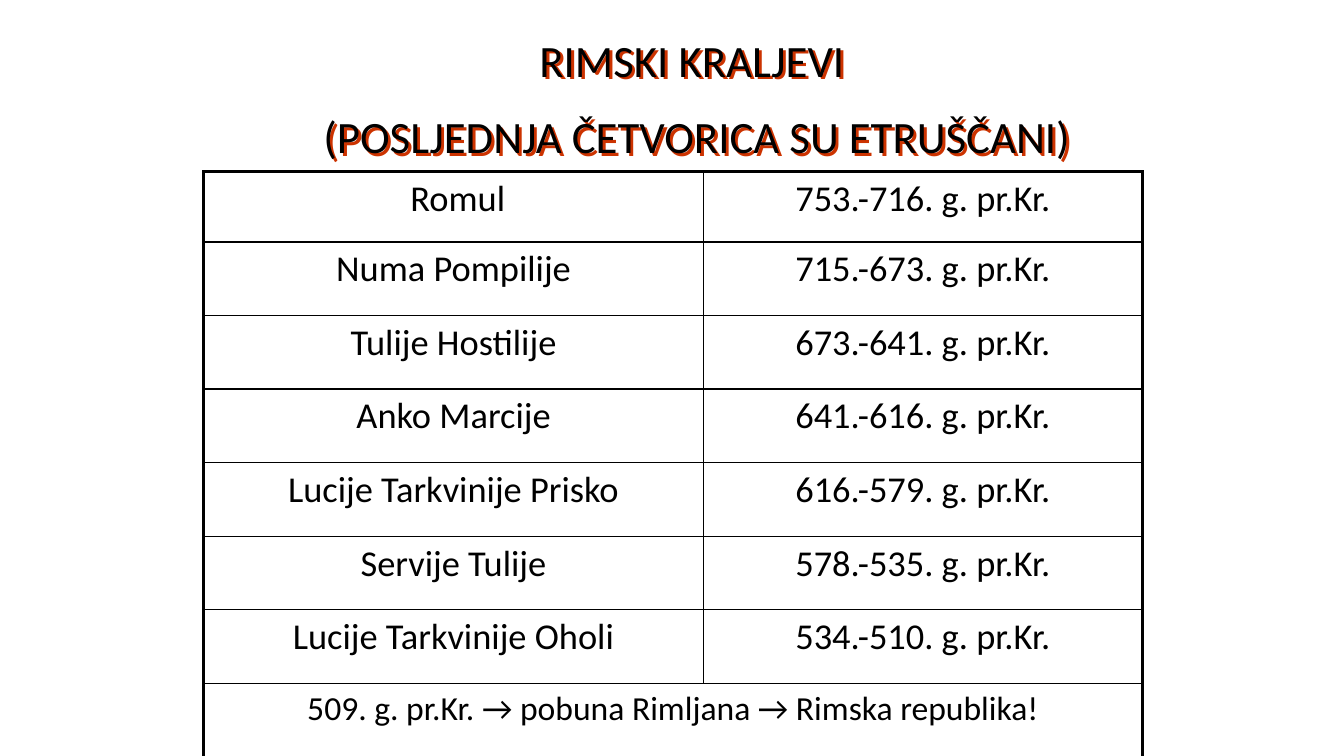
from typing import NamedTuple

from lxml import etree
from pptx import Presentation
from pptx.dml.color import RGBColor
from pptx.enum.text import MSO_ANCHOR, MSO_AUTO_SIZE, PP_ALIGN
from pptx.oxml.ns import qn
from pptx.util import Inches, Pt

CENTER = PP_ALIGN.CENTER
TOP = MSO_ANCHOR.TOP
NO_AUTOFIT = MSO_AUTO_SIZE.NONE

FONT = "Calibri"
BLACK = "000000"
SHADOW = "CC3300"
THIN, THICK = 1, 2.25
COLUMN_WIDTHS = (4.96, 4.35)
FIRST_ROW_HEIGHT, ROW_HEIGHT = 0.7, 0.73


class King(NamedTuple):
    name: str
    reign: str


TITLE_LINES = ("RIMSKI KRALJEVI ", "(POSLJEDNJA ČETVORICA SU ETRUŠČANI)")
KINGS = (
    King(" Romul", "753.-716. g. pr.Kr."),
    King("Numa Pompilije", "715.-673. g. pr.Kr."),
    King("Tulije Hostilije", "673.-641. g. pr.Kr."),
    King("Anko Marcije", "641.-616. g. pr.Kr."),
    King("Lucije Tarkvinije Prisko", "616.-579. g. pr.Kr."),
    King("Servije Tulije", "578.-535. g. pr.Kr."),
    King("Lucije Tarkvinije Oholi", "534.-510. g. pr.Kr."),
)
CONCLUSION = "509. g. pr.Kr. → pobuna Rimljana → Rimska republika!"


def color(hex_code: str) -> RGBColor:
    return RGBColor.from_string(hex_code)


def format_paragraph(para, size: float) -> None:
    para.alignment = CENTER
    para.font.name = FONT
    para.font.size = Pt(size)
    para.font.color.rgb = color(BLACK)


def add_color(parent, hex_code: str) -> None:
    etree.SubElement(parent, qn("a:srgbClr"), val=hex_code)


def add_text_shadow(shape) -> None:
    """Give an unfilled shape a hard shadow, which falls behind its text."""
    effects = etree.SubElement(shape._element.spPr, qn("a:effectLst"))
    shadow = etree.SubElement(effects, qn("a:outerShdw"), dist=str(Inches(0.04)),
                              dir="2700000", algn="ctr", rotWithShape="0")
    add_color(shadow, SHADOW)


def add_title(page) -> None:
    title = page.shapes.title
    title.left, title.top = Inches(2.25), Inches(0.27)
    title.width, title.height = Inches(9.33), Inches(1.43)
    title.fill.background()
    add_text_shadow(title)
    frame = title.text_frame
    frame.word_wrap = True
    frame.auto_size = NO_AUTOFIT
    frame.vertical_anchor = TOP
    frame.text = "\n".join(TITLE_LINES)
    for para in frame.paragraphs:
        format_paragraph(para, 32)
    frame.paragraphs[1].space_before = Pt(16)


def set_borders(cell, widths: dict[str, float]) -> None:
    """Draw black borders; widths maps L, R, T and B to points."""
    properties = cell._tc.get_or_add_tcPr()
    for position, (side, width) in enumerate(widths.items()):
        line = etree.Element(qn(f"a:ln{side}"), w=str(Pt(width)))
        add_color(etree.SubElement(line, qn("a:solidFill")), BLACK)
        properties.insert(position, line)


def fill_cell(cell, text: str, size: float) -> None:
    cell.text = text
    cell.vertical_anchor = TOP
    format_paragraph(cell.text_frame.paragraphs[0], size)


def add_kings_table(page) -> None:
    row_count = len(KINGS) + 1
    heights = [FIRST_ROW_HEIGHT] + [ROW_HEIGHT] * len(KINGS)
    table = page.shapes.add_table(
        row_count, 2, Inches(2.02), Inches(1.7),
        Inches(sum(COLUMN_WIDTHS)), Inches(sum(heights))).table
    table.first_row = table.horz_banding = False
    for column, width in zip(table.columns, COLUMN_WIDTHS):
        column.width = Inches(width)
    for row, height in zip(table.rows, heights):
        row.height = Inches(height)

    last = row_count - 1
    table.cell(last, 0).merge(table.cell(last, 1))
    for row_index, king in enumerate(KINGS):
        for column_index, text in enumerate(king):
            fill_cell(table.cell(row_index, column_index), text, 26)
    fill_cell(table.cell(last, 0), CONCLUSION, 24)

    for row_index in range(row_count):
        for column_index in range(2):
            cell = table.cell(row_index, column_index)
            cell.fill.background()
            merged = row_index == last
            set_borders(cell, {
                "L": THICK if column_index == 0 else THIN,
                "R": THICK if column_index == 1 or merged else THIN,
                "T": THICK if row_index == 0 else THIN,
                "B": THICK if merged else THIN,
            })


def main() -> None:
    deck = Presentation()
    deck.slide_width, deck.slide_height = Inches(13.33), Inches(7.5)
    page = deck.slides.add_slide(deck.slide_layouts.get_by_name("Title Only"))
    add_title(page)
    add_kings_table(page)
    deck.save("out.pptx")


if __name__ == "__main__":
    main()
